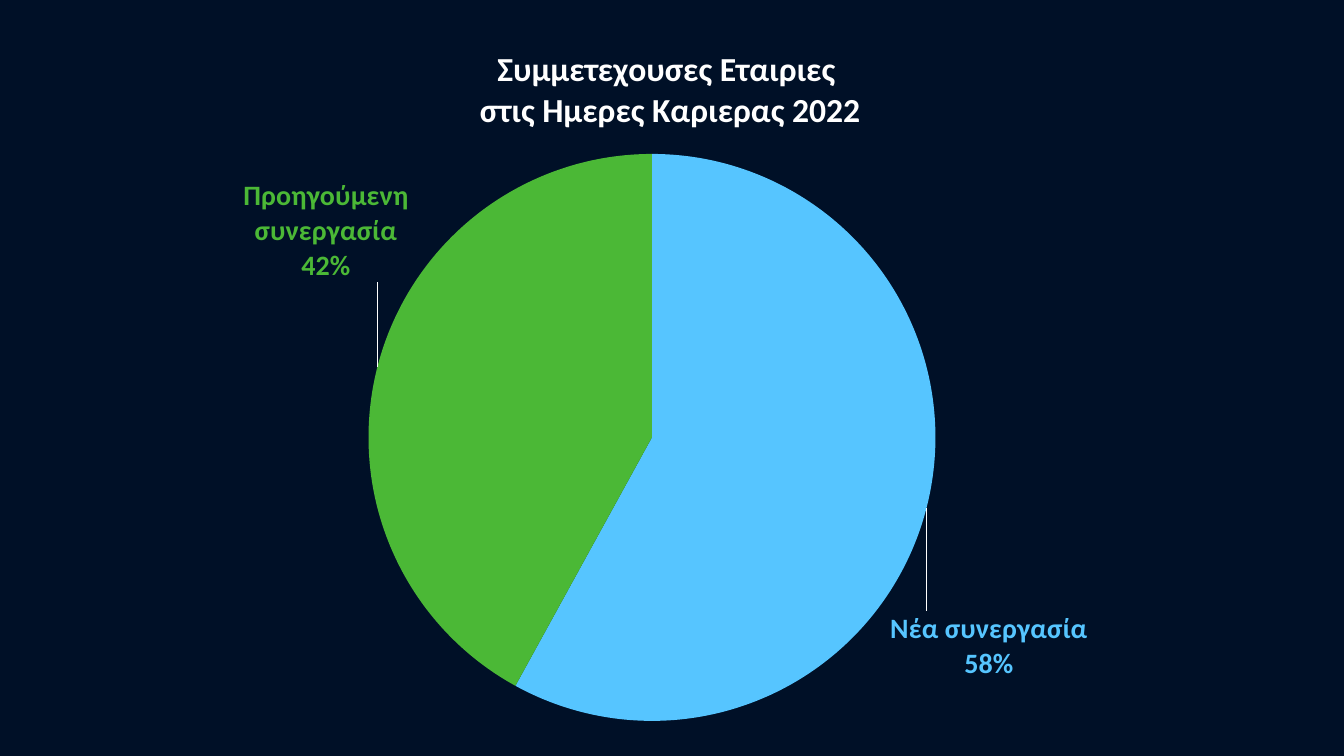
from dataclasses import dataclass
from typing import Any

from lxml.etree import _Element
from pptx import Presentation
from pptx.chart.data import CategoryChartData
from pptx.dml.color import RGBColor
from pptx.enum.chart import XL_CHART_TYPE, XL_LABEL_POSITION
from pptx.oxml import parse_xml
from pptx.oxml.ns import nsdecls
from pptx.util import Emu, Pt

NAVY = RGBColor(0x00, 0x10, 0x27)
WHITE = RGBColor(0xFF, 0xFF, 0xFF)
BLUE = RGBColor(0x56, 0xC5, 0xFF)
GREEN = RGBColor(0x4B, 0xB8, 0x36)
FONT = "Calibri"
EMU_PER_PX = 914400 / 100.8


@dataclass(frozen=True)
class Area:
    left: int
    top: int
    width: int
    height: int


@dataclass(frozen=True)
class Slice:
    name: str
    percent: int
    color: RGBColor
    shift_x: int
    shift_y: int


CHART = Area(21, 21, 1294, 715)
PIE = Area(347, 133, 568, 567)
TITLE_LEFT, TITLE_TOP = 456, 24
TITLE = "Συμμετεχουσες Εταιριες \nστις Ημερες Καριερας 2022"
SLICES = [
    Slice("Νέα συνεργασία", 58, BLUE, -42, 102),
    Slice("Προηγούμενη συνεργασία", 42, GREEN, 37, -83),
]


def px(length: int) -> Emu:
    return Emu(round(length * EMU_PER_PX))


def style_font(font: Any, size: int, color: RGBColor, bold: bool) -> None:
    for name, value in {"name": FONT, "size": Pt(size), "bold": bold}.items():
        setattr(font, name, value)
    font.color.rgb = color


def chart_xml(tag: str, content: str) -> _Element:
    return parse_xml(f"<c:{tag} {nsdecls('c', 'a')}>{content}</c:{tag}>")


def place(parent: _Element, index: int, modes: str, left: int, top: int, size: str = "") -> None:
    for layout in parent.xpath("./c:layout"):
        parent.remove(layout)
    position = f'<c:x val="{left / CHART.width:.4f}"/><c:y val="{top / CHART.height:.4f}"/>'
    content = f"<c:manualLayout>{modes}{position}{size}</c:manualLayout>"
    parent.insert(index, chart_xml("layout", content))


def style_title(chart: Any) -> None:
    frame = chart.chart_title.text_frame
    frame.text = TITLE
    for para in frame.paragraphs:
        for span in para.runs:
            style_font(span.font, 24, WHITE, True)
    title = chart._chartSpace.xpath("c:chart/c:title")[0]
    place(title, 1, '<c:xMode val="edge"/><c:yMode val="edge"/>', TITLE_LEFT, TITLE_TOP)


def place_pie(chart: Any) -> None:
    modes = '<c:layoutTarget val="inner"/><c:xMode val="edge"/><c:yMode val="edge"/>'
    size = f'<c:w val="{PIE.width / CHART.width:.4f}"/><c:h val="{PIE.height / CHART.height:.4f}"/>'
    plot_area = chart._chartSpace.xpath("c:chart/c:plotArea")[0]
    place(plot_area, 0, modes, PIE.left, PIE.top, size)


def style_labels(series: Any) -> None:
    labels = series.data_labels
    style_font(labels.font, 20, BLUE, True)
    formats = {
        "show_value": False,
        "show_percentage": True,
        "show_category_name": True,
        "position": XL_LABEL_POSITION.OUTSIDE_END,
    }
    for name, value in formats.items():
        setattr(labels, name, value)
    line = f'<c:spPr><a:ln w="9525"><a:solidFill><a:srgbClr val="{WHITE}"/></a:solidFill></a:ln></c:spPr>'
    group = series._element.xpath("c:dLbls")[0]
    for flag in group.xpath("c:showLeaderLines"):
        group.remove(flag)
    group.append(parse_xml(f'<c:showLeaderLines {nsdecls("c")} val="1"/>'))
    group.append(chart_xml("leaderLines", line))


def style_slice(series: Any, index: int, part: Slice) -> None:
    point = series.points[index]
    point.format.fill.solid()
    point.format.fill.fore_color.rgb = part.color
    point.format.line.fill.background()
    style_font(point.data_label.font, 20, part.color, True)
    point.data_label.position = XL_LABEL_POSITION.OUTSIDE_END
    label = series._element.xpath(f"c:dLbls/c:dLbl[c:idx/@val='{index}']")[0]
    for tag, shown in {"showVal": "0", "showCatName": "1", "showPercent": "1"}.items():
        label.xpath(f"c:{tag}")[0].set("val", shown)
    label.append(chart_xml("separator", "\n"))
    place(label, 1, "", part.shift_x, part.shift_y)


def add_pie(page: Any) -> None:
    data = CategoryChartData()
    data.categories = [part.name for part in SLICES]
    data.add_series("Series 1", [part.percent for part in SLICES])
    chart = page.shapes.add_chart(
        XL_CHART_TYPE.PIE, px(CHART.left), px(CHART.top), px(CHART.width), px(CHART.height), data
    ).chart
    chart.has_legend = False
    style_font(chart.font, 10, WHITE, False)
    style_title(chart)
    place_pie(chart)
    plot = chart.plots[0]
    plot.vary_by_categories = True
    series = plot.series[0]
    style_labels(series)
    for index, part in enumerate(SLICES):
        style_slice(series, index, part)


def main() -> None:
    deck = Presentation()
    deck.slide_width, deck.slide_height = px(1344), px(756)
    page = deck.slides.add_slide(deck.slide_layouts[6])
    page.background.fill.solid()
    page.background.fill.fore_color.rgb = NAVY
    add_pie(page)
    deck.save("out.pptx")


if __name__ == "__main__":
    main()
